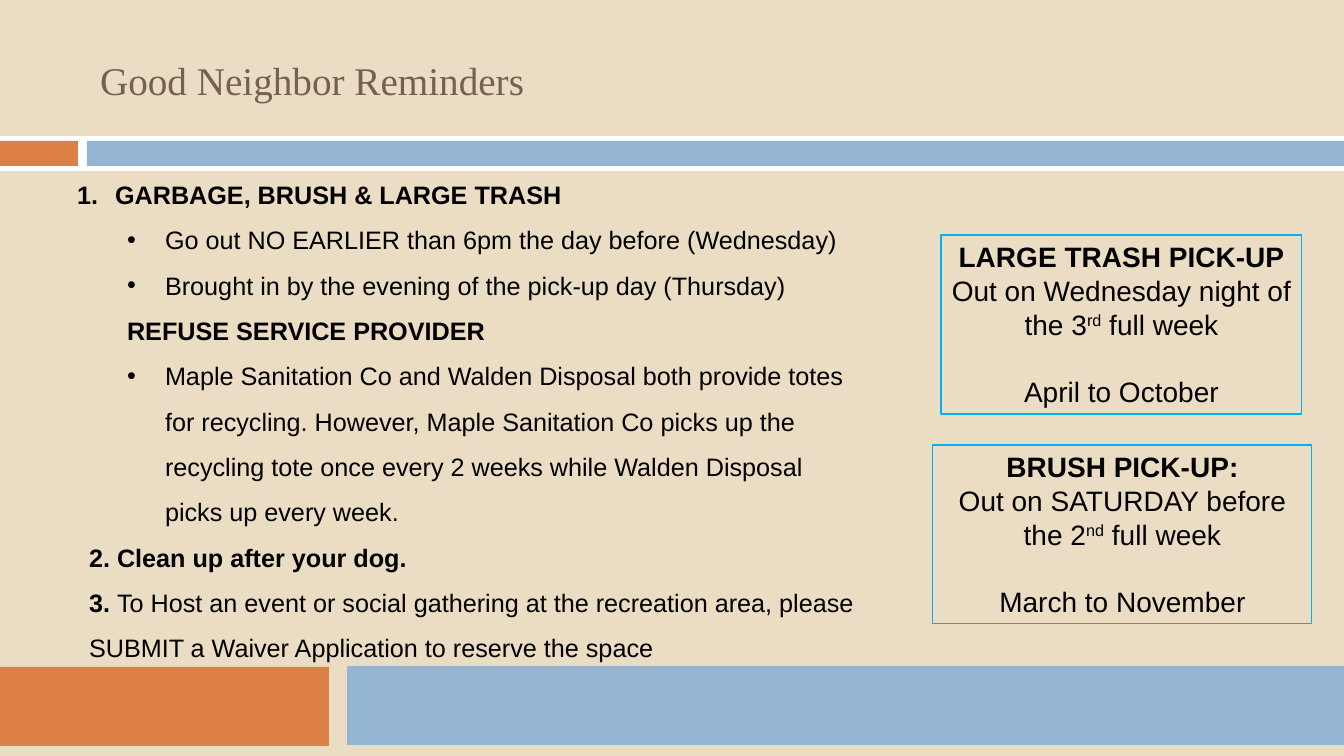
from lxml import etree
from pptx import Presentation
from pptx import util as u
from pptx.dml.color import RGBColor
from pptx.enum import shapes, text
from pptx.oxml.ns import qn

COLORS = {"sand": "EBDDC3", "white": "FFFFFF", "orange": "DD8047", "blue": "94B6D2",
          "brown": "775F55", "black": "000000", "cyan": "00B0F0"}
SLIDE = (1344, 756)
BARS = [
    ((0, 136, 1344, 35), "white"),
    ((0, 141, 78, 25), "orange"),
    ((87, 141, 1257, 25), "blue"),
    ((-1, 667, 330, 79), "orange"),
    ((347, 666, 997, 79), "blue"),
]
TITLE = "Good Neighbor Reminders"
TITLE_BOX = (90, 25, 843, 109)
BODY_BOX = (67, 159, 807, 508)
NUMBER = ("a:buAutoNum", {"type": "arabicPeriod"})
DOT = ("a:buChar", {"char": "•"})
PLAIN = ("a:buNone", {})
REMINDERS = [
    (0, 38, -38, NUMBER, [("GARBAGE, BRUSH & LARGE TRASH", "b")]),
    (1, 88, -38, DOT, [("Go out NO EARLIER than 6pm the day before (Wednesday)", "")]),
    (1, 88, -38, DOT, [("Brought in by the evening of the pick-up day (Thursday)", "")]),
    (1, 50, 0, PLAIN, [("REFUSE SERVICE PROVIDER", "b")]),
    (1, 88, -38, DOT, [("Maple Sanitation Co and Walden Disposal both provide totes "
                        "for recycling. However, Maple Sanitation Co picks up the "
                        "recycling tote once every 2 weeks while Walden Disposal "
                        "picks up every week.", "")]),
    (1, 12, 0, PLAIN, [("2. Clean up after your dog.", "b")]),
    (1, 12, 0, PLAIN, [("3. ", "b"),
                       ("To Host an event or social gathering at the recreation area, "
                        "please SUBMIT a Waiver Application to reserve the space", "")]),
]
PICKUPS = [
    ((941, 235, 361, 179),
     [[("LARGE TRASH PICK-UP", "b")],
      [("Out on Wednesday night of the 3", ""), ("rd", "sup"), (" full week", "")],
      [("April to October", "")]]),
    ((933, 445, 379, 179),
     [[("BRUSH PICK-UP:", "b")],
      [("Out on SATURDAY before the 2", ""), ("nd", "sup"), (" full week", "")],
      [("March to November", "")]]),
]
PX = 914400 / 100.8


def px(n):
    return u.Emu(round(n * PX))


def rgb(name):
    return RGBColor.from_string(COLORS[name])


def apply(obj, **values):
    for name, value in values.items():
        setattr(obj, name, value)


def place(sp, box):
    apply(sp, **dict(zip(("left", "top", "width", "height"), map(px, box))))


def add_rect(s, box):
    sp = s.shapes.add_shape(shapes.MSO_SHAPE.RECTANGLE, *map(px, box))
    sp.shadow.inherit = False
    return sp


def add_runs(p, runs, size, face="Arial", color="black"):
    for words, style in runs:
        r = p.add_run()
        r.text = words
        apply(r.font, name=face, size=u.Pt(size), bold=style == "b")
        r.font.color.rgb = rgb(color)
        if style == "sup":
            r.font._element.set("baseline", "30000")


def paragraphs(tf, items):
    for i, item in enumerate(items):
        yield (tf.add_paragraph() if i else tf.paragraphs[0]), item


def main():
    prs = Presentation()
    prs.slide_width, prs.slide_height = map(px, SLIDE)
    s = prs.slides.add_slide(prs.slide_layouts[1])
    s.background.fill.solid()
    s.background.fill.fore_color.rgb = rgb("sand")

    for i, (box, color) in enumerate(BARS):
        sp = add_rect(s, box)
        sp.fill.solid()
        sp.fill.fore_color.rgb = rgb(color)
        sp.line.fill.background()
        s.shapes.element.insert(2 + i, sp.element)

    title, body = s.placeholders
    place(title, TITLE_BOX)
    title.text_frame.vertical_anchor = text.MSO_ANCHOR.MIDDLE
    p = title.text_frame.paragraphs[0]
    p.alignment = text.PP_ALIGN.LEFT
    add_runs(p, [(TITLE, "")], 28, "Times New Roman", "brown")

    place(body, BODY_BOX)
    tf = body.text_frame
    apply(tf, word_wrap=True, auto_size=text.MSO_AUTO_SIZE.NONE,
          vertical_anchor=text.MSO_ANCHOR.TOP)
    for p, (level, left, indent, (tag, attrs), runs) in paragraphs(tf, REMINDERS):
        apply(p, level=level, line_spacing=1.5, space_before=u.Pt(0))
        pPr = p._p.get_or_add_pPr()
        pPr.set("marL", str(px(left)))
        pPr.set("indent", str(px(indent)))
        etree.SubElement(pPr, qn(tag), attrs)
        add_runs(p, runs, 18)

    for box, lines in PICKUPS:
        sp = add_rect(s, box)
        sp.fill.background()
        sp.line.color.rgb = rgb("cyan")
        sp.line.width = u.Pt(0.75)
        tf = sp.text_frame
        apply(tf, word_wrap=True, vertical_anchor=text.MSO_ANCHOR.TOP,
              margin_left=px(8), margin_right=px(8))
        for p, runs in paragraphs(tf, lines):
            p.alignment = text.PP_ALIGN.CENTER
            add_runs(p, runs, 20)
        p.space_before = u.Pt(24)

    prs.save("out.pptx")


if __name__ == "__main__":
    main()
